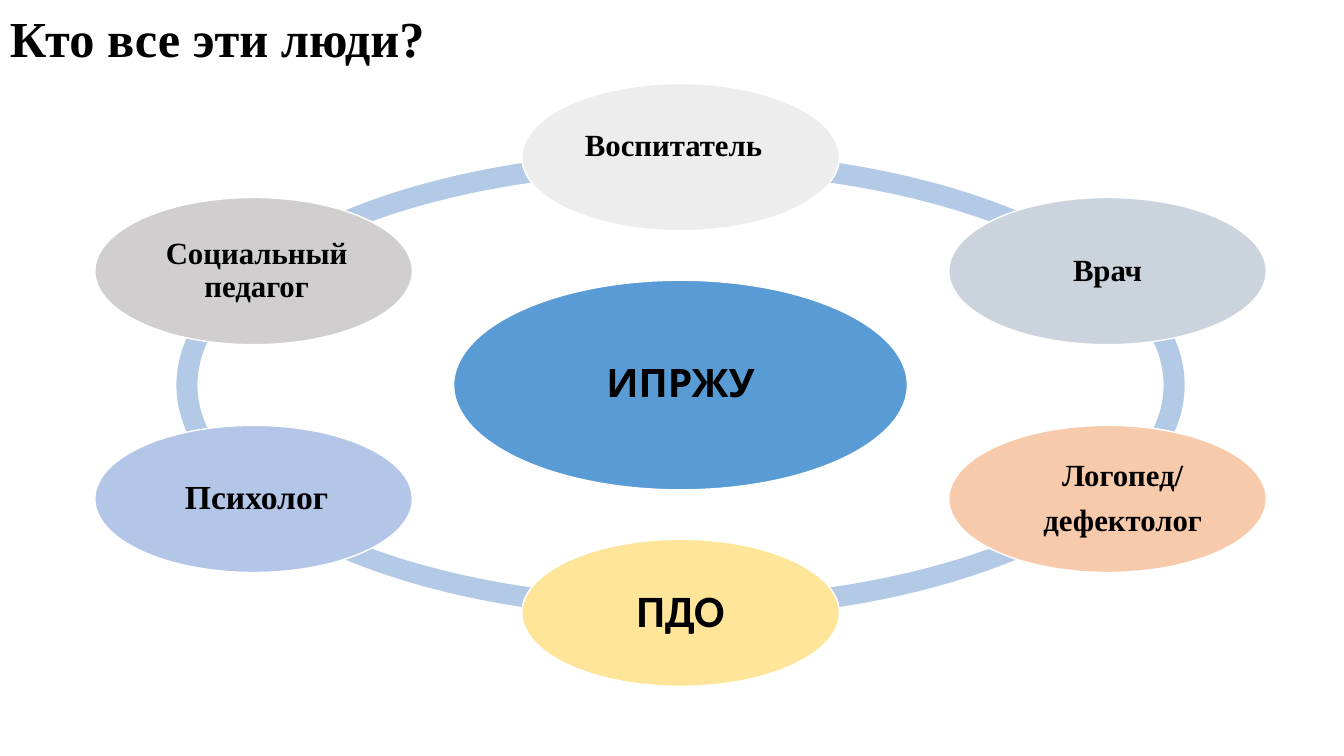
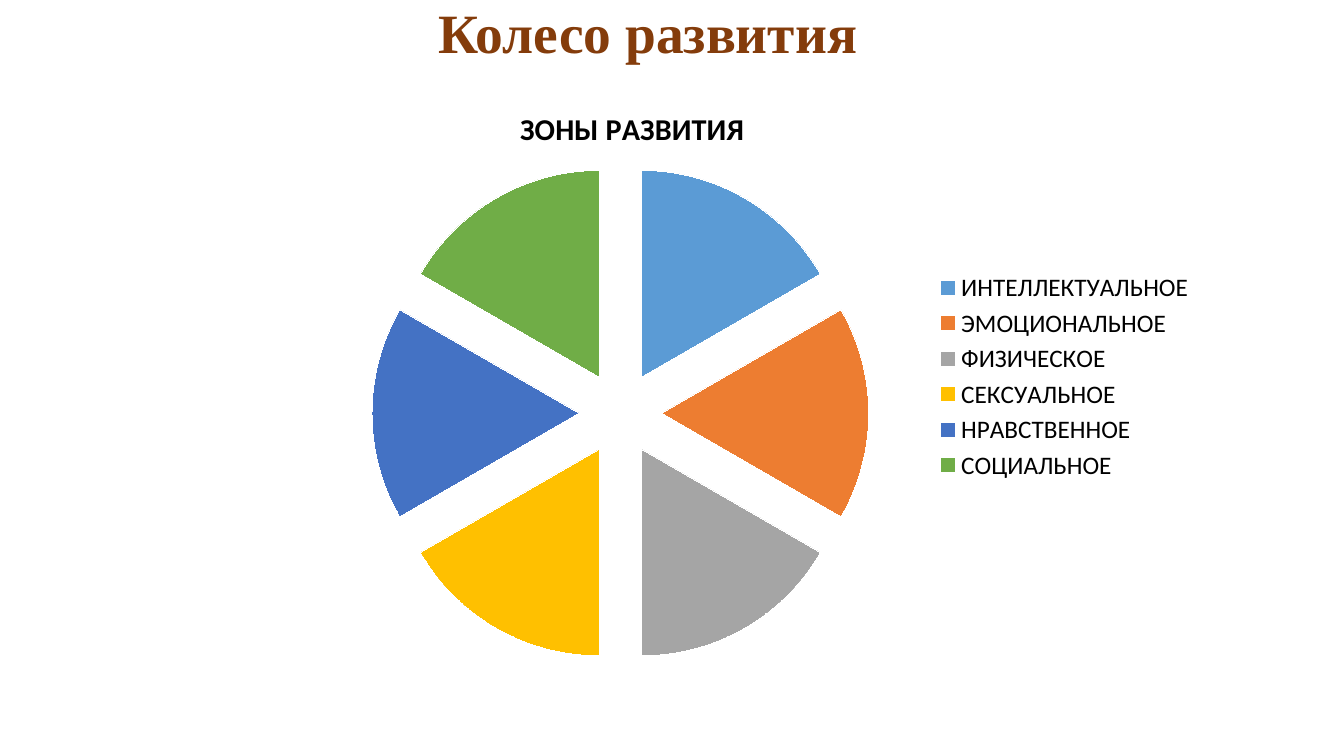
import math
from pptx import Presentation, util as u
from pptx.chart.data import CategoryChartData
from pptx.dml.color import RGBColor
from pptx.enum import chart as ch, shapes, text
from pptx.oxml import parse_xml
from pptx.oxml.ns import nsdecls

SERIF = "Times New Roman"
BLACK = "000000"
WHITE = "FFFFFF"


def paint(part, hue):
    part.solid()
    part.fore_color.rgb = RGBColor.from_string(hue)


def write(shape, words, size, face=SERIF, hue=BLACK,
          align=text.PP_ALIGN.CENTER, pads=(0.04, 0.04, 0.04, 0.04)):
    frame = shape.text_frame
    frame.word_wrap = True
    frame.vertical_anchor = text.MSO_ANCHOR.MIDDLE
    for side, pad in zip(("left", "top", "right", "bottom"), pads):
        setattr(frame, "margin_" + side, u.Inches(pad))
    frame.text = words
    for i, para in enumerate(frame.paragraphs):
        para.alignment = align
        para.line_spacing = 0.9
        if i:
            para.space_before = u.Pt(8.4)
        look = {"name": face, "size": u.Pt(size), "bold": True}
        for key, val in look.items():
            setattr(para.font, key, val)
        paint(para.font.fill, hue)


deck = Presentation()
deck.slide_width = u.Inches(13.33)
deck.slide_height = u.Inches(7.5)

heads = [
    ("Кто все эти люди?", (0, -0.22, 9, 1.25), 36, BLACK, text.PP_ALIGN.LEFT),
    ("Колесо развития", (0, 0, 12.85, 0.7), 39.6, "843C0B", text.PP_ALIGN.CENTER),
]
slides = []
for words, box, size, hue, align in heads:
    slide = deck.slides.add_slide(deck.slide_layouts[6])
    title = slide.shapes.add_textbox(*map(u.Inches, box))
    write(title, words, size, hue=hue, align=align, pads=(0.1, 0.05, 0.1, 0.05))
    slides.append(slide)
team, wheel = slides

mid_x, mid_y = 6.75, 3.82
even = (0.04, 0.04, 0.04, 0.04)
roles = [
    ("Воспитатель", "EDEDED", 22, SERIF, (0.03, 0.03, 0.17, 0.25)),
    ("Врач", "CBD3DD", 22, SERIF, even),
    ("Логопед/\nдефектолог", "F7CAAC", 22, SERIF, (0.33, 0.03, 0.03, 0.03)),
    ("ПДО", "FEE599", 32, "Calibri", even),
    ("Психолог", "B3C6E7", 24, SERIF, (0.1, 0.04, 0.04, 0.04)),
    ("Социальный педагог", "D0CECE", 22, SERIF, (0.09, 0.03, 0.03, 0.03)),
]
ovals = [(mid_x, mid_y, 4.5, 2.08, "ИПРЖУ", "599BD5", 28, "Comic Neue", even)]
for i, role in enumerate(roles):
    turn = math.radians(60 * i - 90)
    x = mid_x + 4.89 * math.cos(turn)
    y = mid_y + 2.26 * math.sin(turn)
    ovals.append((x, y, 3.15, 1.46, *role))

ring = team.shapes.add_shape(
    shapes.MSO_SHAPE.DONUT, u.Inches(mid_x - 5), u.Inches(mid_y - 2.32),
    u.Inches(10), u.Inches(4.64))
ring.adjustments[0] = 0.045
ring.shadow.inherit = False
paint(ring.fill, "B3CAE7")
ring.line.fill.background()

for x, y, wide, high, words, hue, size, face, pads in ovals:
    oval = team.shapes.add_shape(
        shapes.MSO_SHAPE.OVAL, u.Inches(x - wide / 2), u.Inches(y - high / 2),
        u.Inches(wide), u.Inches(high))
    oval.shadow.inherit = False
    paint(oval.fill, hue)
    paint(oval.line.fill, WHITE)
    oval.line.width = u.Pt(1)
    write(oval, words, size, face, pads=pads)

zones = {
    "ИНТЕЛЛЕКТУАЛЬНОЕ": "5B9BD5",
    "ЭМОЦИОНАЛЬНОЕ": "ED7D31",
    "ФИЗИЧЕСКОЕ": "A5A5A5",
    "СЕКСУАЛЬНОЕ": "FFC000",
    "НРАВСТВЕННОЕ": "4472C4",
    "СОЦИАЛЬНОЕ": "70AD47",
}
name = "ЗОНЫ РАЗВИТИЯ"
data = CategoryChartData()
data.categories = list(zones)
data.add_series(name, [17] * len(zones))
pie = wheel.shapes.add_chart(
    ch.XL_CHART_TYPE.PIE, u.Inches(3.06), u.Inches(0.77),
    u.Inches(8.89), u.Inches(5.93), data).chart

pie.has_title = True
pie.chart_title.text_frame.text = name
head = pie.chart_title.text_frame.paragraphs[0].font
pie.has_legend = True
pie.legend.position = ch.XL_LEGEND_POSITION.RIGHT
pie.legend.include_in_layout = False
for font, size, bold in ((pie.font, 18, False), (pie.legend.font, 18, False),
                         (head, 21.6, True)):
    for key, val in {"name": "Calibri", "size": u.Pt(size), "bold": bold}.items():
        setattr(font, key, val)
    paint(font.fill, BLACK)

place = parse_xml(
    f'<c:layout {nsdecls("c")}><c:manualLayout><c:xMode val="edge"/>'
    '<c:yMode val="edge"/><c:x val="0.23"/><c:y val="0.04"/>'
    '</c:manualLayout></c:layout>')
crown = pie.chart_title._element
for old in crown.findall("{*}layout"):
    crown.remove(old)
crown.find("{*}tx").addnext(place)

plot = pie.plots[0]
plot.vary_by_categories = True
ser = plot.series[0]
paint(ser.format.fill, "5B9BD5")
ser._element.find("{*}spPr").addnext(
    parse_xml(f'<c:explosion {nsdecls("c")} val="20"/>'))
for i, hue in enumerate(zones.values()):
    slice_look = ser.points[i].format
    paint(slice_look.fill, hue)
    paint(slice_look.line.fill, WHITE)

deck.save("out.pptx")
